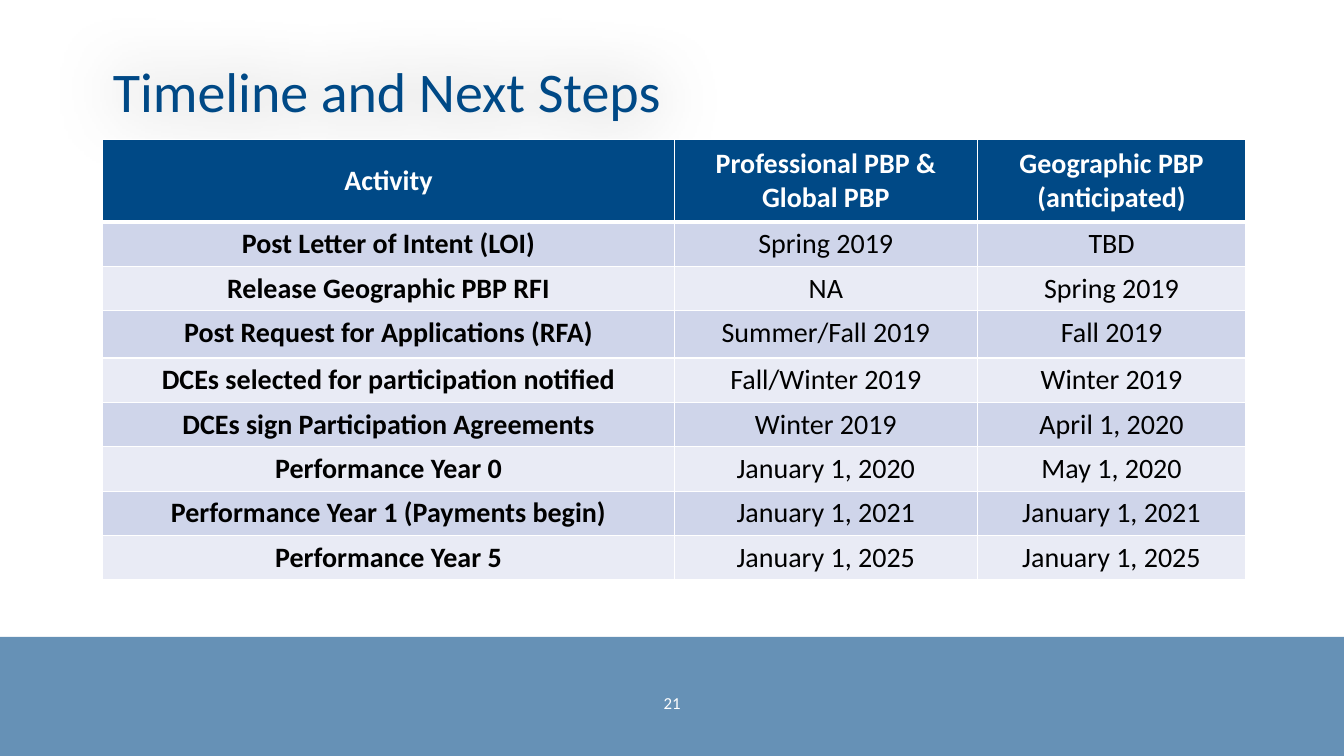
from lxml import etree
from pptx import Presentation
from pptx import util as u
from pptx.dml.color import RGBColor
from pptx.enum import shapes, text
from pptx.oxml import ns

COLOURS = {
    "navy": "004986",
    "white": "FFFFFF",
    "black": "000000",
    "band_dark": "CFD5EA",
    "band_light": "E9EBF5",
}
COLUMN_WIDTHS = [408.2, 216.7, 191.5]
HEADER_HEIGHT, ROW_HEIGHT, TALL_ROW_HEIGHT = 59, 31.2, 33.8
TALL_ROW = 3
HEADINGS = ["Activity", "Professional PBP & Global PBP", "Geographic PBP\v(anticipated)"]
MILESTONES = [
    ["Post Letter of Intent (LOI)", "Spring 2019", "TBD"],
    ["Release Geographic PBP RFI", "NA", "Spring 2019"],
    ["Post Request for Applications (RFA)", "Summer/Fall 2019", "Fall 2019"],
    ["DCEs selected for participation notified", "Fall/Winter 2019", "Winter 2019"],
    ["DCEs sign Participation Agreements", "Winter 2019", "April 1, 2020"],
    ["Performance Year 0", "January 1, 2020", "May 1, 2020"],
    ["Performance Year 1 (Payments begin)", "January 1, 2021", "January 1, 2021"],
    ["Performance Year 5", "January 1, 2025", "January 1, 2025"],
]


def colour(name):
    return RGBColor.from_string(COLOURS[name])


def add_element(parent, tag, **attributes):
    return etree.SubElement(parent, ns.qn(tag), {k: str(v) for k, v in attributes.items()})


class TimelineSlide:
    font_name = "Calibri"

    def __init__(self, deck):
        self.page = deck.slides.add_slide(deck.slide_layouts[5])

    def style(self, para, size, colour_name, bold=False, align=text.PP_ALIGN.CENTER):
        para.alignment = align
        para.font.name = self.font_name
        para.font.size = u.Pt(size)
        para.font.bold = bold
        para.font.color.rgb = colour(colour_name)

    def title(self, wording, left, top, width, height):
        box = self.page.shapes.title
        box.left, box.top, box.width, box.height = map(u.Pt, (left, top, width, height))
        frame = box.text_frame
        frame.text = wording
        frame.auto_size = text.MSO_AUTO_SIZE.NONE
        frame.vertical_anchor = text.MSO_ANCHOR.BOTTOM
        para = frame.paragraphs[0]
        para.line_spacing = 0.9
        self.style(para, 40, "navy", align=text.PP_ALIGN.LEFT)
        effects = add_element(box._element.spPr, "a:effectLst")
        shadow = add_element(effects, "a:outerShdw", blurRad=u.Pt(50), dist=0, algn="ctr", rotWithShape=0)
        shade = add_element(shadow, "a:srgbClr", val=COLOURS["black"])
        add_element(shade, "a:alpha", val=40000)

    def band(self, left, top, width, height, fill, opacity):
        box = self.page.shapes.add_shape(
            shapes.MSO_SHAPE.RECTANGLE, *map(u.Pt, (left, top, width, height)))
        box.shadow.inherit = False
        box.fill.solid()
        box.fill.fore_color.rgb = colour(fill)
        box.line.fill.background()
        fill_colour = box._element.spPr.find(".//" + ns.qn("a:srgbClr"))
        add_element(fill_colour, "a:alpha", val=opacity * 1000)

    def label(self, wording, left, top, width, height, size, colour_name):
        box = self.page.shapes.add_textbox(*map(u.Pt, (left, top, width, height)))
        frame = box.text_frame
        frame.word_wrap = True
        frame.text = wording
        frame.vertical_anchor = text.MSO_ANCHOR.MIDDLE
        self.style(frame.paragraphs[0], size, colour_name)

    def cell(self, cell, wording, fill, colour_name, bold, header):
        properties = cell._tc.get_or_add_tcPr()
        for side in "LRTB":
            weight = 3 if header and side == "B" or not header and side == "H" else 1
            line = add_element(properties, "a:ln" + side, w=u.Pt(weight))
            add_element(add_element(line, "a:solidFill"), "a:srgbClr", val=COLOURS["white"])
        cell.fill.solid()
        cell.fill.fore_color.rgb = colour(fill)
        cell.vertical_anchor = text.MSO_ANCHOR.MIDDLE if header else text.MSO_ANCHOR.TOP
        cell.text_frame.text = wording
        self.style(cell.text_frame.paragraphs[0], 20, colour_name, bold)

    def table(self, rows, left, top, widths, heights):
        frame = self.page.shapes.add_table(
            len(rows), len(widths), *map(u.Pt, (left, top, sum(widths), sum(heights))))
        table = frame.table
        for column, width in zip(table.columns, widths):
            column.width = u.Pt(width)
        for index, (row, height) in enumerate(zip(rows, heights)):
            table.rows[index].height = u.Pt(height)
            header = index == 0
            fill = "navy" if header else ("band_light", "band_dark")[index % 2]
            for number, wording in enumerate(row):
                self.cell(table.cell(index, number), wording, fill,
                          "white" if header else "black", header or number == 0, header)


def main():
    deck = Presentation()
    deck.slide_width, deck.slide_height = u.Pt(960), u.Pt(540)
    slide = TimelineSlide(deck)
    slide.band(0, 455, 960, 86, "navy", 60)
    slide.title("Timeline and Next Steps", 73.4, 34.6, 720, 58.3)
    heights = [HEADER_HEIGHT] + [ROW_HEIGHT] * len(MILESTONES)
    heights[TALL_ROW] = TALL_ROW_HEIGHT
    slide.table([HEADINGS] + MILESTONES, 73.4, 99.5, COLUMN_WIDTHS, heights)
    slide.label("21", 372.2, 487.5, 216, 28.8, 12, "white")
    deck.save("out.pptx")


if __name__ == "__main__":
    main()
